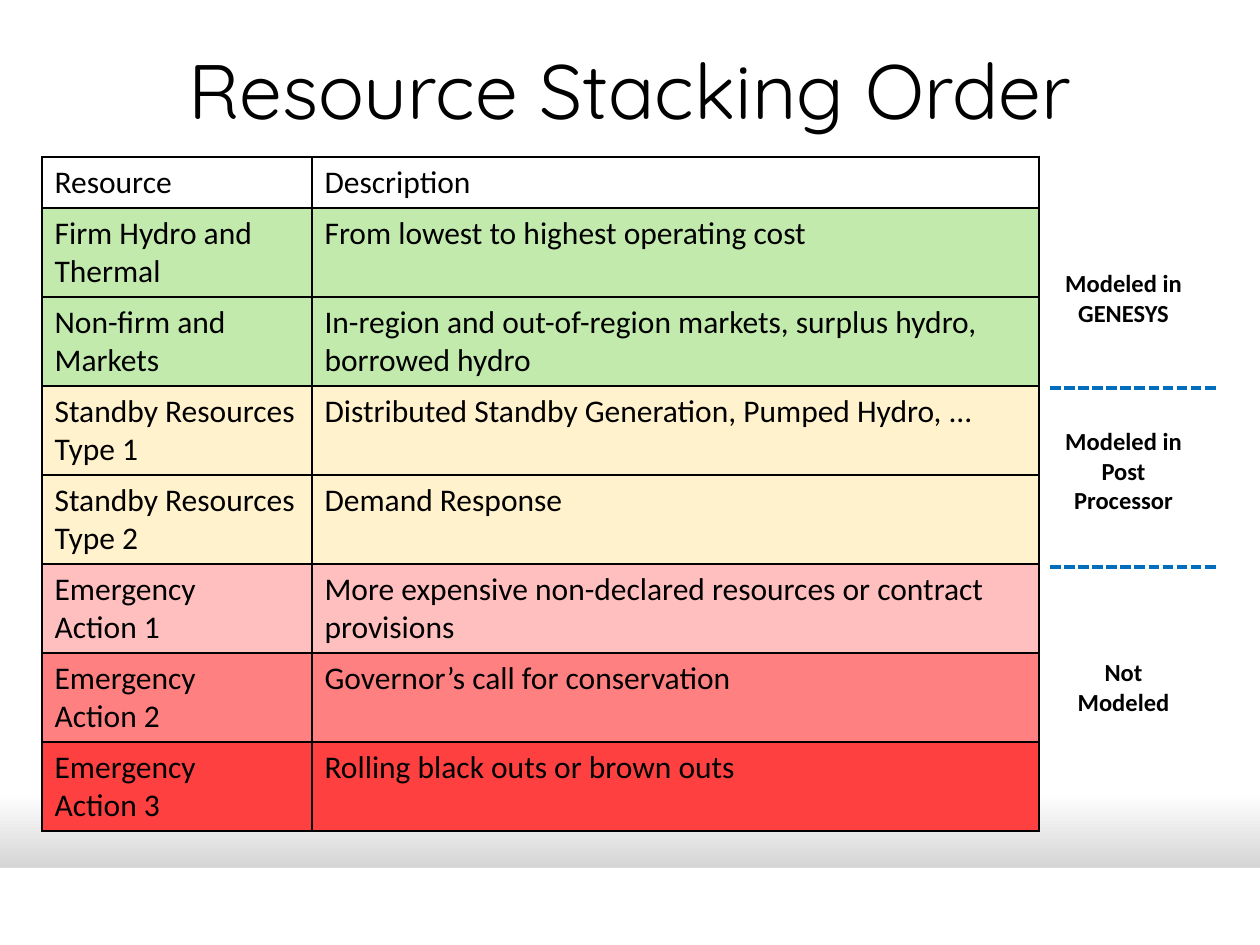
from lxml.etree import SubElement
from pptx import Presentation
from pptx.dml.color import RGBColor
from pptx.enum.dml import MSO_LINE
from pptx.enum.shapes import MSO_CONNECTOR, MSO_SHAPE
from pptx.enum.text import MSO_ANCHOR, PP_ALIGN
from pptx.oxml.ns import qn
from pptx.util import Pt

SCALE = 914400 / 126  # EMU per px

BLACK = RGBColor(0x00, 0x00, 0x00)
WHITE = RGBColor(0xFF, 0xFF, 0xFF)
GRAY = RGBColor(0xA6, 0xA6, 0xA6)
BLUE = RGBColor(0x00, 0x6E, 0xBC)
GREEN = RGBColor(0xC3, 0xEA, 0xAD)
YELLOW = RGBColor(0xFF, 0xF2, 0xCC)
PINK = RGBColor(0xFF, 0xBF, 0xBF)
LIGHT_RED = RGBColor(0xFF, 0x80, 0x80)
RED = RGBColor(0xFF, 0x40, 0x40)

TITLE = "Resource Stacking Order"
ROWS = [  # resource, description, fill
    ("Resource", "Description", WHITE),
    ("Firm Hydro and Thermal", "From lowest to highest operating cost", GREEN),
    ("Non-firm and\nMarkets",
     "In-region and out-of-region markets, surplus hydro, borrowed hydro", GREEN),
    ("Standby Resources\nType 1",
     "Distributed Standby Generation, Pumped Hydro, ...", YELLOW),
    ("Standby Resources\nType 2", "Demand Response", YELLOW),
    ("Emergency\nAction 1",
     "More expensive non-declared resources or contract provisions", PINK),
    ("Emergency\nAction 2", "Governor’s call for conservation", LIGHT_RED),
    ("Emergency\nAction 3", "Rolling black outs or brown outs", RED),
]
LABELS = [  # text, top, height
    ("Modeled in GENESYS", 262, 72),
    ("Modeled in Post Processor", 420, 102),
    ("Not Modeled", 651, 72),
]
DIVIDERS = [388, 567]

TABLE_LEFT, TABLE_TOP = 42, 157
COLUMN_WIDTHS = [270, 727]
HEADER_HEIGHT, ROW_HEIGHT = 51, 89
SIDE_LEFT, LABEL_WIDTH, DIVIDER_WIDTH = 1050, 147, 168


def px(*lengths):
    return [round(length * SCALE) for length in lengths]


def write_text(frame, text, size=18, font="Calibri", bold=False, align=PP_ALIGN.LEFT):
    frame.word_wrap = True
    for index, line in enumerate(text.split("\n")):
        paragraph = frame.add_paragraph() if index else frame.paragraphs[0]
        paragraph.alignment = align
        run = paragraph.add_run()
        run.text = line
        run.font.size = Pt(size)
        run.font.name = font
        run.font.bold = bold
        run.font.color.rgb = BLACK


def add_borders(cell):
    properties = cell._tc.get_or_add_tcPr()
    for position, side in enumerate(("lnL", "lnR", "lnT", "lnB")):
        line = properties.makeelement(qn(f"a:{side}"), {"w": str(Pt(1))})
        properties.insert(position, line)
        fill = SubElement(line, qn("a:solidFill"))
        SubElement(fill, qn("a:srgbClr"), val=str(BLACK))


def add_background(slide):
    fill = slide.background.fill
    fill.gradient()
    fill.gradient_angle = 270
    for stop, position, color in zip(fill.gradient_stops, (0.84, 1), (WHITE, GRAY)):
        stop.position = position
        stop.color.rgb = color
    band = slide.shapes.add_shape(MSO_SHAPE.RECTANGLE, *px(0, 868, 1260, 77))
    band.shadow.inherit = False
    band.fill.solid()
    band.fill.fore_color.rgb = WHITE
    band.line.fill.background()


def add_resource_table(slide):
    heights = [HEADER_HEIGHT] + [ROW_HEIGHT] * (len(ROWS) - 1)
    table = slide.shapes.add_table(
        len(ROWS), len(COLUMN_WIDTHS),
        *px(TABLE_LEFT, TABLE_TOP, sum(COLUMN_WIDTHS), sum(heights))).table
    for column, width in zip(table.columns, px(*COLUMN_WIDTHS)):
        column.width = width
    for row, height, (*texts, color) in zip(table.rows, px(*heights), ROWS):
        row.height = height
        for cell, text in zip(row.cells, texts):
            cell.fill.solid()
            cell.fill.fore_color.rgb = color
            add_borders(cell)
            write_text(cell.text_frame, text)


def add_divider(slide, y):
    line = slide.shapes.add_connector(
        MSO_CONNECTOR.STRAIGHT, *px(SIDE_LEFT, y, SIDE_LEFT + DIVIDER_WIDTH, y))
    line.line.color.rgb = BLUE
    line.line.width = Pt(2)
    line.line.dash_style = MSO_LINE.SQUARE_DOT
    SubElement(line._element.spPr, qn("a:effectLst"))


def main():
    presentation = Presentation()
    presentation.slide_width, presentation.slide_height = px(1260, 945)
    slide = presentation.slides.add_slide(presentation.slide_layouts[6])
    add_background(slide)

    # Title
    title = slide.shapes.add_textbox(*px(94, 21, 1072, 136)).text_frame
    title.vertical_anchor = MSO_ANCHOR.MIDDLE
    write_text(title, TITLE, size=44, font="Quicksand", align=PP_ALIGN.CENTER)

    add_resource_table(slide)

    # Side labels and the dashed lines between them
    for text, top, height in LABELS:
        label = slide.shapes.add_textbox(*px(SIDE_LEFT, top, LABEL_WIDTH, height))
        write_text(label.text_frame, text, size=14, bold=True, align=PP_ALIGN.CENTER)
    for y in DIVIDERS:
        add_divider(slide, y)

    presentation.save("out.pptx")


if __name__ == "__main__":
    main()
